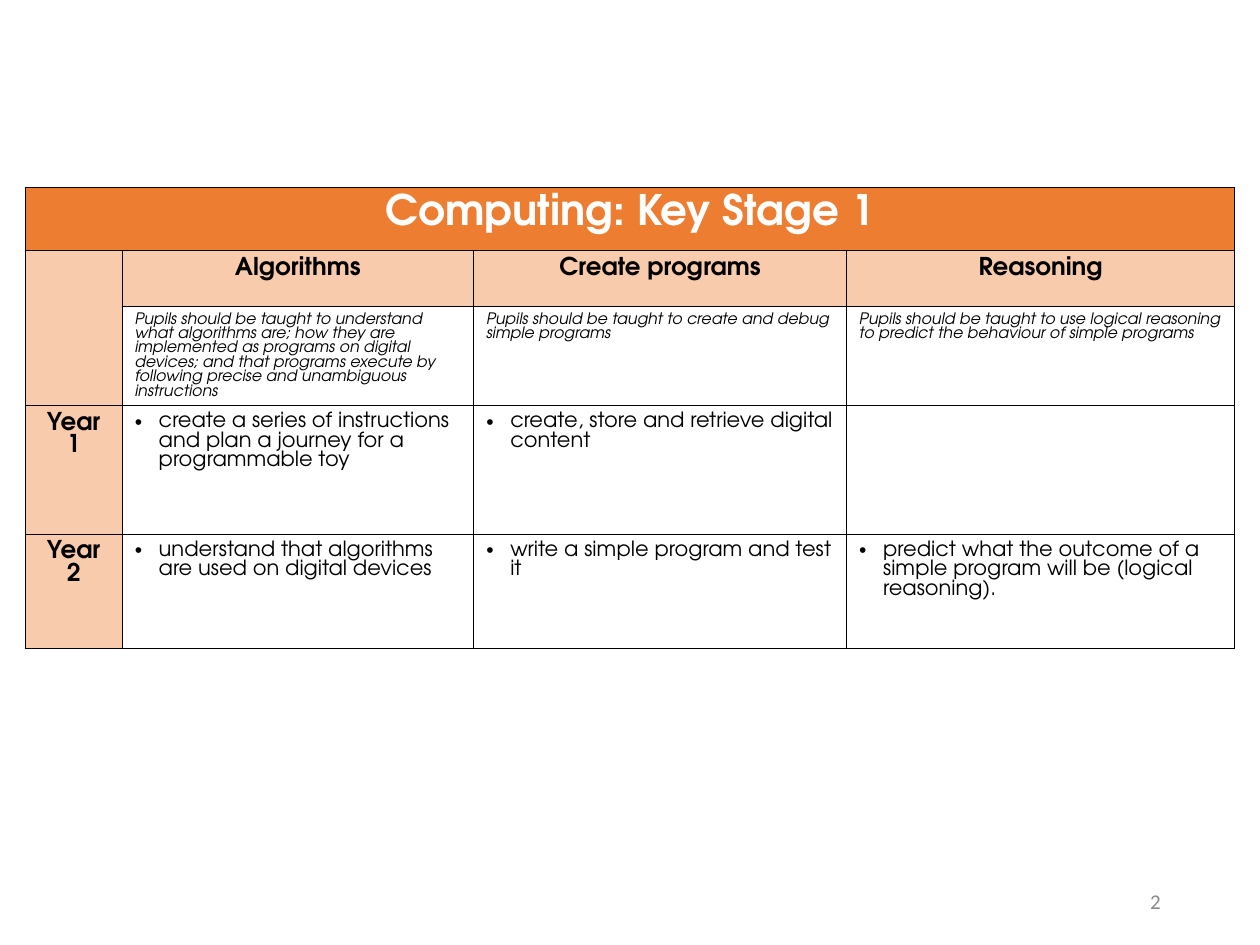
from lxml import etree
from pptx import Presentation
from pptx.dml.color import RGBColor
from pptx.enum.text import MSO_ANCHOR, PP_ALIGN
from pptx.oxml import parse_xml
from pptx.oxml.ns import nsdecls, qn
from pptx.util import Inches, Pt

CENTER, RIGHT = PP_ALIGN.CENTER, PP_ALIGN.RIGHT
MIDDLE = MSO_ANCHOR.MIDDLE
TABLE_FONT = "TeX Gyre Adventor"
ORANGE, PEACH, BLACK, WHITE, GRAY = "ED7D31", "F8CBAD", "000000", "FFFFFF", "898989"


def color(value):
    return RGBColor.from_string(value)


def write(paragraph, text, size, font=TABLE_FONT, ink=BLACK, bold=False, italic=False):
    run = paragraph.add_run()
    run.text = text
    run.font.name = font
    run.font.size = Pt(size)
    run.font.bold = bold
    run.font.italic = italic
    run.font.color.rgb = color(ink)


presentation = Presentation()
presentation.slide_width = Inches(10)
presentation.slide_height = Inches(7.5)
slide = presentation.slides.add_slide(presentation.slide_layouts[6])

column_widths = [0.77, 2.79, 2.96, 3.08]
row_heights = [0.5, 0.44, 0.77, 1.02, 0.91]
rows = [
    ["Computing: Key Stage 1", "", "", ""],
    ["", "Algorithms", "Create programs", "Reasoning"],
    [
        "",
        "Pupils should be taught to understand what algorithms are; how they are implemented "
        "as programs on digital devices; and that programs execute by following precise and "
        "unambiguous instructions",
        "Pupils should be taught to create and debug simple programs",
        "Pupils should be taught to use logical reasoning to predict the behaviour of simple programs",
    ],
    [
        "Year 1",
        "create a series of instructions and plan a journey for a programmable toy",
        "create, store and retrieve digital content",
        "",
    ],
    [
        "Year 2",
        "understand that algorithms are used on digital devices",
        "write a simple program and test it",
        "predict what the outcome of a simple program will be (logical reasoning).",
    ],
]

table = slide.shapes.add_table(
    len(rows), len(column_widths), Inches(0.2), Inches(1.49),
    Inches(sum(column_widths)), Inches(sum(row_heights))
).table
for column, width in zip(table.columns, column_widths):
    column.width = Inches(width)
for row, height in zip(table.rows, row_heights):
    row.height = Inches(height)

for row_index, texts in enumerate(rows):
    for column_index, text in enumerate(texts):
        cell = table.cell(row_index, column_index)
        is_title = row_index == 0
        is_heading = row_index == 1 or column_index == 0
        if is_title or is_heading:
            cell.fill.solid()
            cell.fill.fore_color.rgb = color(ORANGE if is_title else PEACH)
        else:
            cell.fill.background()
        properties = cell._tc.get_or_add_tcPr()
        for position, side in enumerate("LRTB"):
            border = parse_xml(
                f'<a:ln{side} {nsdecls("a")} w="{Pt(0.5)}"><a:solidFill>'
                f'<a:srgbClr val="{BLACK}"/></a:solidFill></a:ln{side}>'
            )
            properties.insert(position, border)
        if not text:
            continue
        paragraph = cell.text_frame.paragraphs[0]
        if is_title:
            paragraph.alignment = CENTER
            write(paragraph, text, 24, ink=WHITE, bold=True)
        elif is_heading:
            paragraph.alignment = CENTER
            write(paragraph, text, 14, bold=True)
        elif row_index == 2:
            write(paragraph, text, 9, italic=True)
        else:
            bullet = paragraph._p.get_or_add_pPr()
            bullet.set("marL", str(Inches(0.19)))
            bullet.set("indent", str(Inches(-0.19)))
            etree.SubElement(bullet, qn("a:buFont")).set("typeface", "Arial")
            etree.SubElement(bullet, qn("a:buChar")).set("char", "•")
            write(paragraph, text, 12)

table.cell(0, 0).merge(table.cell(0, 3))
table.cell(1, 0).merge(table.cell(2, 0))

number_box = slide.shapes.add_textbox(Inches(7.06), Inches(6.95), Inches(2.25), Inches(0.4))
number_frame = number_box.text_frame
number_frame.word_wrap = True
number_frame.vertical_anchor = MIDDLE
number_paragraph = number_frame.paragraphs[0]
number_paragraph.alignment = RIGHT
write(number_paragraph, "2", 12, font="Calibri", ink=GRAY)

presentation.save("out.pptx")
